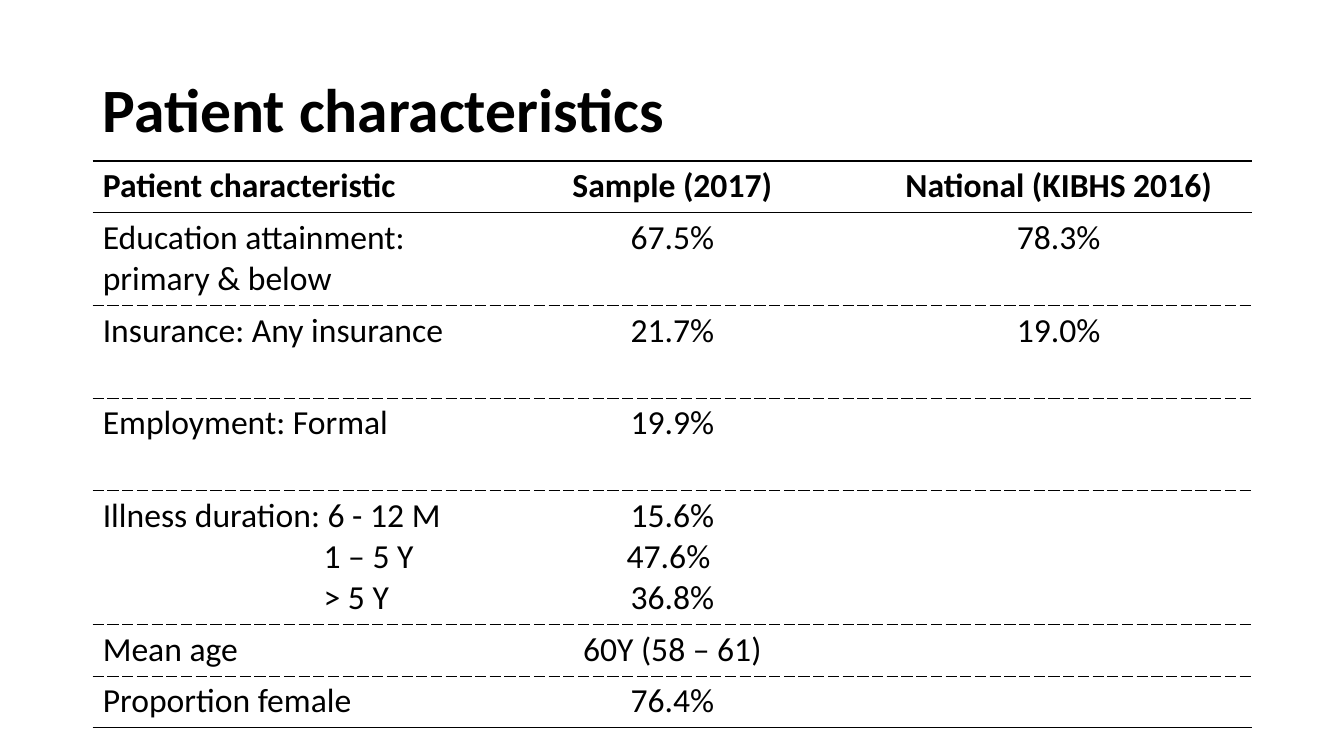
import pptx
import pptx.util
import pptx.dml.color
import pptx.enum.text
import pptx.oxml
import pptx.oxml.ns

W, H = 13.33, 7.5
FONT, BLACK = "Calibri", "000000"
LEFT, CENTER = pptx.enum.text.PP_ALIGN.LEFT, pptx.enum.text.PP_ALIGN.CENTER
SOLID, DASHED = (1, "solid"), (0.5, "sysDash")
LINE_H, CELL_PAD, DURATION_INDENT = 0.41, 0.1, 2.19

HEADER = ["Patient characteristic", "Sample (2017)", "National (KIBHS 2016)"]
ROWS = [
    (2, ["Education attainment: primary & below"], ["67.5%"], ["78.3%"]),
    (2, ["Insurance: Any insurance"], ["21.7%"], ["19.0%"]),
    (2, ["Employment: Formal"], ["19.9%"], []),
    (3, ["Illness duration: 6 - 12 M", "1 – 5 Y", "> 5 Y"],
     ["15.6%", "47.6% ", "36.8%"], []),
    (1, ["Mean age"], ["60Y (58 – 61)"], []),
    (1, ["Proportion female"], ["76.4%"], []),
]


def color(value):
    return pptx.dml.color.RGBColor.from_string(value)


def write(p, text, size=24, bold=False, align=LEFT, spacing=None, indent=0):
    p.alignment = align
    p.line_spacing = spacing
    if indent:
        p._p.get_or_add_pPr().set("marL", str(pptx.util.Inches(indent)))
    r = p.add_run()
    r.text = text
    r.font.name = FONT
    r.font.size = pptx.util.Pt(size)
    r.font.bold = bold
    r.font.color.rgb = color(BLACK)


def add_border(cell, side, style=None):
    if style:
        width, dash = style
        body = (f'<a:solidFill><a:srgbClr val="{BLACK}"/></a:solidFill>'
                f'<a:prstDash val="{dash}"/>')
    else:
        width, body = 0, "<a:noFill/>"
    ns = pptx.oxml.ns.nsdecls("a")
    xml = f'<a:ln{side} {ns} w="{pptx.util.Pt(width)}">{body}</a:ln{side}>'
    cell._tc.get_or_add_tcPr().append(pptx.oxml.parse_xml(xml))


def fill_cell(cell, lines, top, bottom, bold, align):
    for side, style in zip("LRTB", (None, None, top, bottom)):
        add_border(cell, side, style)
    cell.fill.background()
    tf = cell.text_frame
    for i, text in enumerate(lines):
        p = tf.add_paragraph() if i else tf.paragraphs[0]
        indent = DURATION_INDENT if i and align == LEFT else 0
        write(p, text, bold=bold, align=align, indent=indent)


def add_title(s, x, y, w, h):
    sp = s.shapes.title
    sp.left, sp.top, sp.width, sp.height = map(pptx.util.Inches, (x, y, w, h))
    tf = sp.text_frame
    tf.vertical_anchor = pptx.enum.text.MSO_ANCHOR.MIDDLE
    write(tf.paragraphs[0], "Patient characteristics", size=44, bold=True, spacing=0.9)


def add_characteristics(s, x, y, w, h):
    rows = [(1, *([text] for text in HEADER))] + ROWS
    last = len(rows) - 1
    box = map(pptx.util.Inches, (x, y, w, h))
    table = s.shapes.add_table(len(rows), len(HEADER), *box).table
    table.first_row = table.horz_banding = False
    for column in table.columns:
        column.width = pptx.util.Inches(w / len(HEADER))
    for i, (line_count, *cells) in enumerate(rows):
        table.rows[i].height = pptx.util.Inches(CELL_PAD + LINE_H * line_count)
        top = SOLID if i < 2 else DASHED
        bottom = SOLID if i in (0, last) else DASHED
        for j, lines in enumerate(cells):
            fill_cell(table.cell(i, j), lines, top, bottom, i == 0, CENTER if j else LEFT)


def main():
    prs = pptx.Presentation()
    prs.slide_width, prs.slide_height = pptx.util.Inches(W), pptx.util.Inches(H)
    s = prs.slides.add_slide(prs.slide_layouts[5])
    x, w = 0.069 * W, 0.8625 * W
    add_title(s, x, 0.053 * H, w, 0.193 * H)
    add_characteristics(s, x, 0.213 * H, w, 0.733 * H)
    prs.save("out.pptx")


if __name__ == "__main__":
    main()
